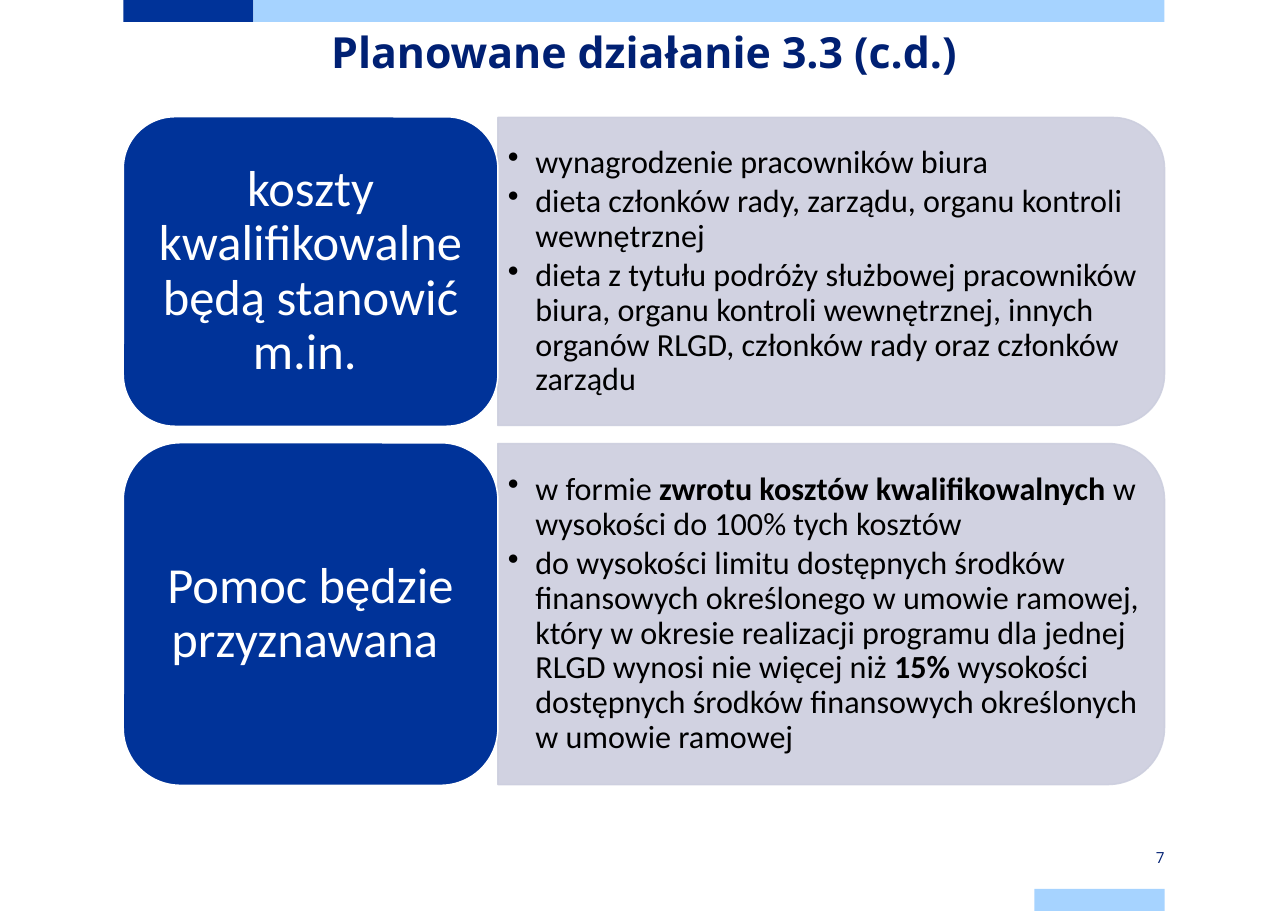
from lxml import etree
from pptx import Presentation
from pptx.dml.color import RGBColor
from pptx.enum.shapes import MSO_SHAPE
from pptx.enum.text import MSO_ANCHOR, PP_ALIGN
from pptx.oxml.ns import qn
from pptx.util import Pt

RECT, TILE = MSO_SHAPE.RECTANGLE, MSO_SHAPE.ROUNDED_RECTANGLE
PANEL = MSO_SHAPE.ROUND_2_SAME_RECTANGLE
TOP, MIDDLE = MSO_ANCHOR.TOP, MSO_ANCHOR.MIDDLE
LEFT, CENTER, RIGHT = PP_ALIGN.LEFT, PP_ALIGN.CENTER, PP_ALIGN.RIGHT

# Content: each bullet is a list of spans (text, bold)
TITLE = "Planowane działanie 3.3 (c.d.)"
PAGE_NUMBER = "7"
ROWS = [
    {"label": "koszty kwalifikowalne będą stanowić m.in. ",
     "top": 76.3, "height": 202.3,
     "bullets": [
         [("wynagrodzenie pracowników biura", False)],
         [("dieta członków rady, zarządu, organu kontroli wewnętrznej", False)],
         [("dieta z tytułu podróży służbowej pracowników biura, organu kontroli "
           "wewnętrznej, innych organów RLGD, członków rady oraz członków zarządu", False)],
     ]},
    {"label": "Pomoc będzie przyznawana ",
     "top": 289.4, "height": 223.9,
     "bullets": [
         [("w formie ", False), ("zwrotu kosztów kwalifikowalnych ", True),
          ("w wysokości do 100% tych kosztów", False)],
         [("do wysokości limitu dostępnych środków finansowych określonego w umowie "
           "ramowej, który w okresie realizacji programu dla jednej RLGD wynosi nie "
           "więcej niż ", False), ("15%", True),
          (" wysokości dostępnych środków finansowych określonych w umowie ramowej", False)],
     ]},
]

# Layout and colours
PAGE_WIDTH, PAGE_HEIGHT = 841.68, 595.44
MARGIN, CONTENT_RIGHT = 80.6, 761
BAR_HEIGHT, SHORT_BAR = 14.4, 85
TILE_WIDTH = 244.8
NAVY, BLUE, SKY, LILAC = "002073", "003399", "A6D3FF", "CCCEDE"
WHITE, BLACK = "FFFFFF", "000000"


def color(code):
    return RGBColor.from_string(code)


def style_span(span, font, size, code, bold=False):
    span.font.name, span.font.size, span.font.bold = font, Pt(size), bold
    span.font.color.rgb = color(code)


def set_frame(frame, anchor, side=0, end=0):
    frame.word_wrap = True
    frame.vertical_anchor = anchor
    frame.margin_left = frame.margin_right = Pt(side)
    frame.margin_top = frame.margin_bottom = Pt(end)


def add_shape(kind, left, top, width, height, fill, line=None):
    shape = page.shapes.add_shape(kind, Pt(left), Pt(top), Pt(width), Pt(height))
    shape.shadow.inherit = False
    shape.fill.solid()
    shape.fill.fore_color.rgb = color(fill)
    if line:
        shape.line.color.rgb = color(line)
        shape.line.width = Pt(1)
    else:
        shape.line.fill.background()
    return shape


def write_line(frame, text, align, font, size, code, bold=False):
    para = frame.paragraphs[0]
    para.text = text
    para.alignment = align
    style_span(para.runs[0], font, size, code, bold)
    return para


def add_bullet_panel(row):
    left = MARGIN + TILE_WIDTH
    width, height = CONTENT_RIGHT - left, row["height"] - 1
    middle = row["top"] + row["height"] / 2

    # The panel is turned a quarter so that its round corners face right
    panel = add_shape(PANEL, left + (width - height) / 2, middle - width / 2,
                      height, width, LILAC, LILAC)
    panel.rotation = 90
    for tint in panel.element.spPr.iter(qn("a:srgbClr")):
        etree.SubElement(tint, qn("a:alpha"), val="90000")

    box = page.shapes.add_textbox(Pt(left), Pt(row["top"] + 11),
                                  Pt(width - 10), Pt(row["height"] - 22))
    frame = box.text_frame
    set_frame(frame, MIDDLE, 6.5, 3)
    for index, spans in enumerate(row["bullets"]):
        para = frame.add_paragraph() if index else frame.paragraphs[0]
        properties = para._p.get_or_add_pPr()
        properties.set("marL", str(Pt(18)))
        properties.set("indent", str(-Pt(18)))
        etree.SubElement(properties, qn("a:buChar"), char="•")
        para.alignment = LEFT
        para.line_spacing = 0.9
        para.space_after = Pt(3.15)
        for text, bold in spans:
            span = para.add_run()
            span.text = text
            style_span(span, "Calibri", 21, BLACK, bold)


def add_label_tile(row):
    tile = add_shape(TILE, MARGIN, row["top"], TILE_WIDTH, row["height"], BLUE, WHITE)
    set_frame(tile.text_frame, MIDDLE, 10, 5)
    para = write_line(tile.text_frame, row["label"], CENTER, "Calibri", 33, WHITE)
    para.line_spacing = 0.9


deck = Presentation()
deck.slide_width, deck.slide_height = Pt(PAGE_WIDTH), Pt(PAGE_HEIGHT)
page = deck.slides.add_slide(deck.slide_layouts[5])

# Bars at the top and bottom
corner = CONTENT_RIGHT - SHORT_BAR
add_shape(RECT, MARGIN, 0, SHORT_BAR, BAR_HEIGHT, BLUE)
add_shape(RECT, MARGIN + SHORT_BAR, 0, corner - MARGIN, BAR_HEIGHT, SKY)
add_shape(RECT, corner, PAGE_HEIGHT - BAR_HEIGHT, SHORT_BAR, BAR_HEIGHT, SKY)

# Title
title = page.shapes.title
title.left, title.top = Pt(MARGIN), Pt(BAR_HEIGHT)
title.width, title.height = Pt(CONTENT_RIGHT - MARGIN), Pt(51)
set_frame(title.text_frame, TOP)
heading = write_line(title.text_frame, TITLE, CENTER, "Open Sans", 28, NAVY, True)
heading.line_spacing = Pt(36)

# Rows: bullets on the right, label on the left
for row in ROWS:
    add_bullet_panel(row)
    add_label_tile(row)

# Page number
number = page.shapes.add_textbox(Pt(corner), Pt(553), Pt(SHORT_BAR), Pt(BAR_HEIGHT))
set_frame(number.text_frame, MIDDLE)
write_line(number.text_frame, PAGE_NUMBER, RIGHT, "Open Sans", 10, NAVY)

deck.save("out.pptx")
